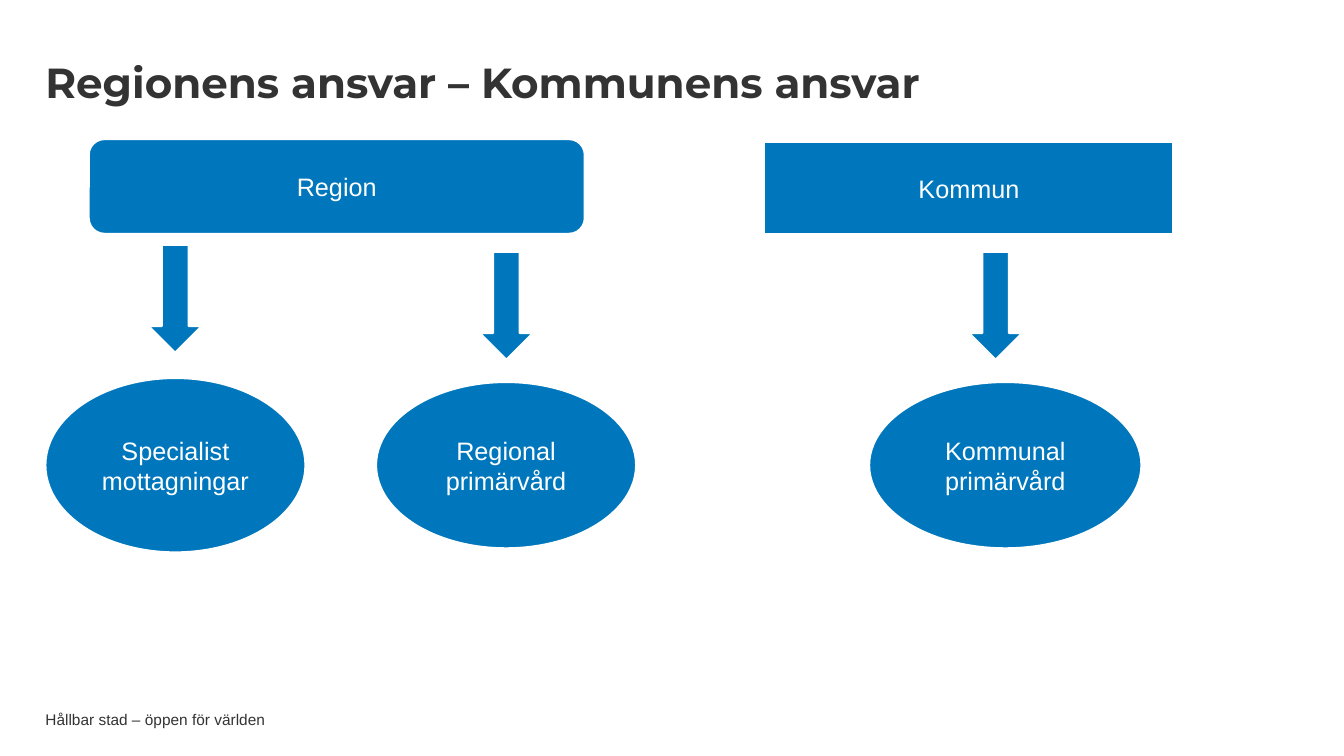
from pptx import Presentation
from pptx import util as u
from pptx.dml.color import RGBColor
from pptx.enum import shapes, text

BLUE = RGBColor(0x00, 0x77, 0xBC)
WHITE = RGBColor(0xFF, 0xFF, 0xFF)
DARK = RGBColor(0x33, 0x33, 0x33)
HEADING_FONT, BODY_FONT = "Montserrat", "Arial"
SLIDE_WIDTH, SLIDE_HEIGHT = u.Inches(13.33), u.Inches(7.5)
TITLE_ONLY = 5
MARGIN = 3.38
ARROW_WIDTH, ARROW_HEIGHT = 3.98, 14.27


class CareSlide:
    """Draws on one slide; every box is (left, top, width, height) in percent of the slide."""

    def __init__(self, deck):
        self.slide = deck.slides.add_slide(deck.slide_layouts[TITLE_ONLY])

    def place(self, box):
        left, top, width, height = box
        return (round(SLIDE_WIDTH * left / 100), round(SLIDE_HEIGHT * top / 100),
                round(SLIDE_WIDTH * width / 100), round(SLIDE_HEIGHT * height / 100))

    def add_lines(self, frame, lines, size, color, align, font=BODY_FONT, bold=False):
        frame.word_wrap = True
        frame.auto_size = text.MSO_AUTO_SIZE.NONE
        frame.vertical_anchor = text.MSO_ANCHOR.MIDDLE
        for index, line in enumerate(lines):
            paragraph = frame.add_paragraph() if index else frame.paragraphs[0]
            paragraph.alignment = align
            run = paragraph.add_run()
            run.text = line
            run.font.name, run.font.size, run.font.bold = font, u.Pt(size), bold
            run.font.color.rgb = color

    def title(self, wording, box):
        heading = self.slide.shapes.title
        heading.left, heading.top, heading.width, heading.height = self.place(box)
        frame = heading.text_frame
        frame.margin_left = frame.margin_right = 0
        frame.margin_top = frame.margin_bottom = u.Inches(0.05)
        self.add_lines(frame, [wording], 30, DARK, text.PP_ALIGN.LEFT, HEADING_FONT, True)
        frame.paragraphs[0].line_spacing = 0.9

    def footer(self, wording, box):
        frame = self.slide.shapes.add_textbox(*self.place(box)).text_frame
        frame.margin_left = frame.margin_right = frame.margin_top = frame.margin_bottom = 0
        self.add_lines(frame, [wording], 11, DARK, text.PP_ALIGN.LEFT)

    def block(self, kind, box, lines=()):
        block = self.slide.shapes.add_shape(kind, *self.place(box))
        block.shadow.inherit = False
        block.fill.solid()
        block.fill.fore_color.rgb = BLUE
        block.line.color.rgb = WHITE
        block.line.width = u.Pt(1.5)
        self.add_lines(block.text_frame, lines, 18, WHITE, text.PP_ALIGN.CENTER)

    def care_unit(self, arrow_center, arrow_top, box, lines):
        """An arrow pointing down at the ellipse of one care provider."""
        self.block(shapes.MSO_SHAPE.DOWN_ARROW,
                   (arrow_center - ARROW_WIDTH / 2, arrow_top, ARROW_WIDTH, ARROW_HEIGHT))
        self.block(shapes.MSO_SHAPE.OVAL, box, lines)


def main():
    deck = Presentation()
    deck.slide_width, deck.slide_height = SLIDE_WIDTH, SLIDE_HEIGHT
    page = CareSlide(deck)
    page.footer("Hållbar stad – öppen för världen", (MARGIN, 94.13, 70.9, 2.13))
    page.title("Regionens ansvar – Kommunens ansvar", (MARGIN, 5.87, 75.24, 10.8))

    page.block(shapes.MSO_SHAPE.ROUNDED_RECTANGLE, (6.6, 18.4, 36.91, 12.53), ["Region"])
    page.care_unit(13.04, 32.4, (MARGIN, 50, 19.35, 23.07), ["Specialist", "mottagningar"])
    page.care_unit(37.68, 33.33, (27.98, 50.53, 19.35, 22), ["Regional", "primärvård"])

    page.block(shapes.MSO_SHAPE.RECTANGLE, (56.86, 18.8, 30.46, 12.13), ["Kommun"])
    page.care_unit(74.08, 33.33, (64.67, 50.53, 20.26, 22), ["Kommunal", "primärvård"])
    deck.save("out.pptx")


if __name__ == "__main__":
    main()
